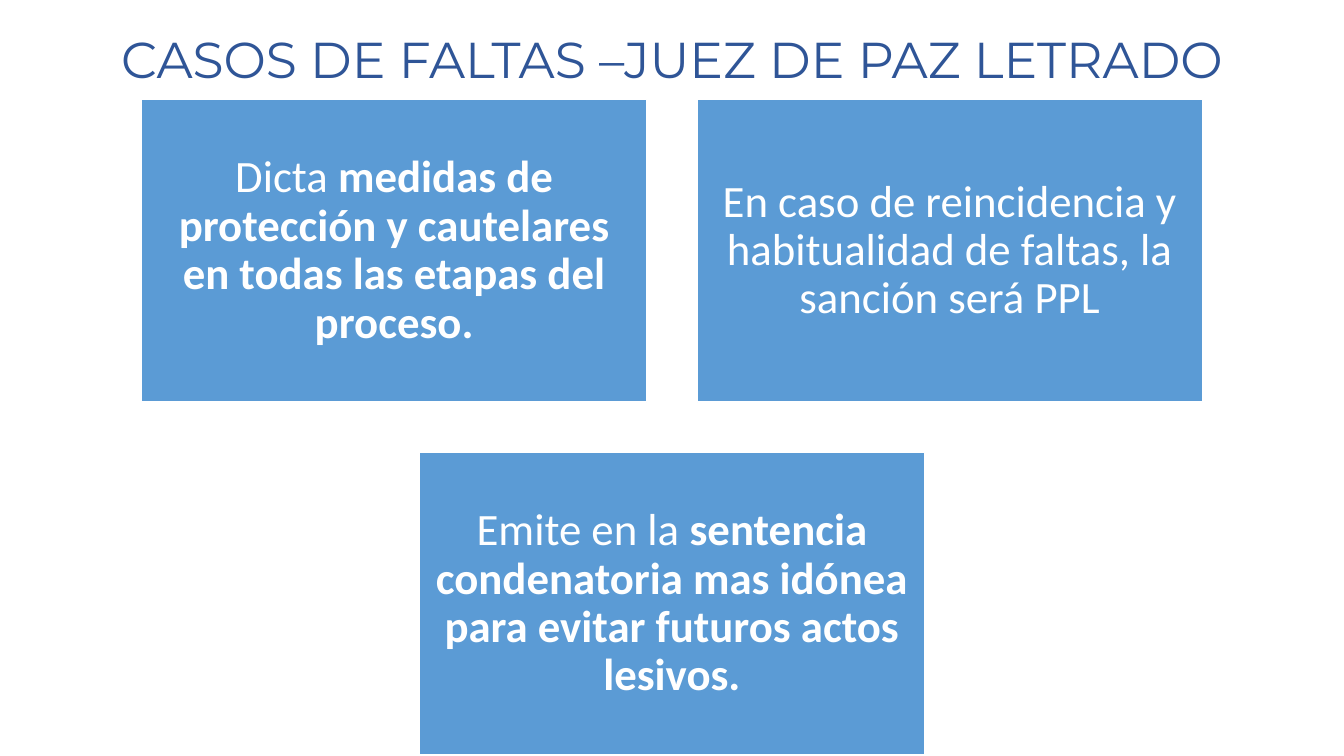
from pptx import Presentation
from pptx.dml.color import RGBColor
from pptx.enum.shapes import MSO_SHAPE
from pptx.enum.text import MSO_ANCHOR, PP_ALIGN
from pptx.util import Inches, Pt

BLUE = RGBColor(0x5B, 0x9B, 0xD5)
NAVY = RGBColor(0x2F, 0x55, 0x97)
WHITE = RGBColor(0xFF, 0xFF, 0xFF)

SLIDE_WIDTH, SLIDE_HEIGHT = 13.33, 7.5
CARD_WIDTH, CARD_HEIGHT, CARD_GAP = 5.01, 3, 0.5
CARDS_PER_ROW = 2

# Each card is a list of (text, bold) pieces
CARDS = [
    [("Dicta ", False),
     ("medidas de protección y cautelares en todas las etapas del proceso.", True)],
    [("En caso de reincidencia y habitualidad de faltas, la sanción será PPL", False)],
    [("Emite en la ", False),
     ("sentencia condenatoria mas idónea para evitar futuros actos lesivos.", True)],
]


def format_paragraph(paragraph, font_name, size, color):
    paragraph.alignment = PP_ALIGN.CENTER
    paragraph.line_spacing = 0.9
    paragraph.font.name = font_name
    paragraph.font.size = Pt(size)
    paragraph.font.color.rgb = color


def add_title(slide, left, top, width, height):
    title = slide.shapes.title
    title.left, title.top = Inches(left), Inches(top)
    title.width, title.height = Inches(width), Inches(height)
    title.text_frame.text = "CASOS DE FALTAS –JUEZ DE PAZ LETRADO"
    title.text_frame.vertical_anchor = MSO_ANCHOR.MIDDLE
    format_paragraph(title.text_frame.paragraphs[0], "Montserrat", 36, NAVY)


def add_card(slide, pieces, left, top, width, height):
    card = slide.shapes.add_shape(MSO_SHAPE.RECTANGLE, Inches(left), Inches(top),
                                  Inches(width), Inches(height))
    card.shadow.inherit = False
    card.fill.solid()
    card.fill.fore_color.rgb = BLUE
    card.line.color.rgb = WHITE
    card.line.width = Pt(1)

    frame = card.text_frame
    frame.word_wrap = True
    frame.vertical_anchor = MSO_ANCHOR.MIDDLE
    frame.margin_left = frame.margin_right = Inches(0.13)
    frame.margin_top = frame.margin_bottom = Inches(0.13)
    paragraph = frame.paragraphs[0]
    format_paragraph(paragraph, "Calibri", 32, WHITE)
    for text, bold in pieces:
        run = paragraph.add_run()
        run.text = text
        run.font.bold = bold


def add_cards(slide, left, top, width):
    """Place the cards in rows, each row centred in the given width."""
    for start in range(0, len(CARDS), CARDS_PER_ROW):
        row = CARDS[start:start + CARDS_PER_ROW]
        row_width = len(row) * (CARD_WIDTH + CARD_GAP) - CARD_GAP
        row_left = left + (width - row_width) / 2
        row_top = top + start // CARDS_PER_ROW * (CARD_HEIGHT + CARD_GAP)
        for column, pieces in enumerate(row):
            add_card(slide, pieces, row_left + column * (CARD_WIDTH + CARD_GAP),
                     row_top, CARD_WIDTH, CARD_HEIGHT)


def main():
    presentation = Presentation()
    presentation.slide_width = Inches(SLIDE_WIDTH)
    presentation.slide_height = Inches(SLIDE_HEIGHT)
    slide = presentation.slides.add_slide(presentation.slide_layouts[5])
    # Heading
    add_title(slide, 0, 0.07, SLIDE_WIDTH, 1.09)
    # Two cards above, one centred below
    add_cards(slide, 0, 0.99, SLIDE_WIDTH)
    presentation.save("out.pptx")


if __name__ == "__main__":
    main()
